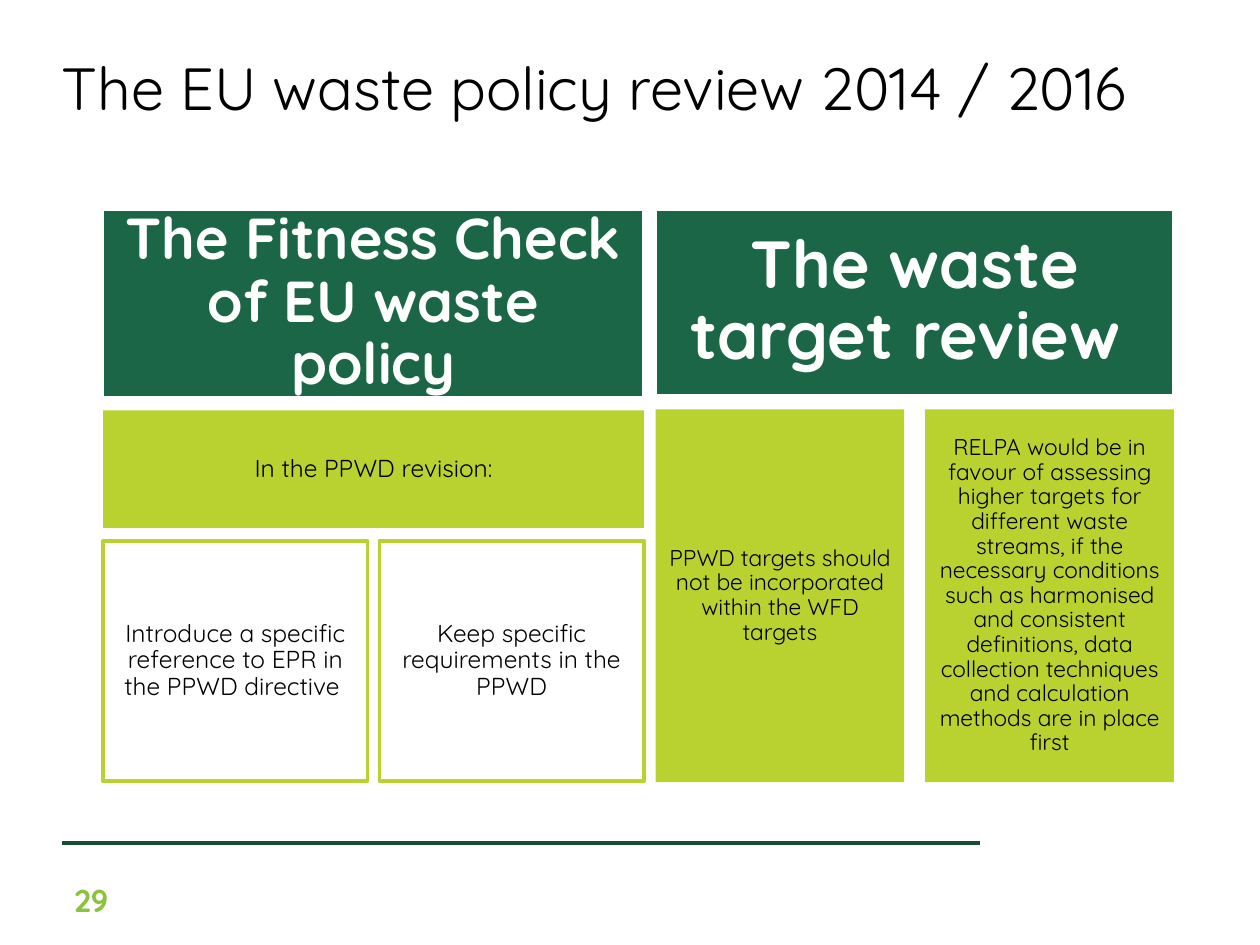
from dataclasses import dataclass

from lxml.etree import SubElement
from pptx import Presentation
from pptx.dml.color import RGBColor
from pptx.enum.shapes import MSO_CONNECTOR, MSO_SHAPE
from pptx.enum.text import MSO_ANCHOR, MSO_AUTO_SIZE, PP_ALIGN
from pptx.oxml.ns import qn
from pptx.util import Pt


@dataclass(frozen=True)
class Theme:
    font: str = "Quicksand"
    black: str = "000000"
    white: str = "FFFFFF"
    forest: str = "1B6647"
    lime: str = "B9D230"
    rule: str = "1A4B33"
    number: str = "8BC33E"
    title_size: int = 34
    fitness_size: int = 33
    target_size: int = 38
    body_size: int = 14
    detail_size: int = 13
    number_size: int = 18


THEME = Theme()


def color(value):
    return RGBColor.from_string(value)


def write_text(frame, text, *, size, ink=THEME.black, bold=False, align=PP_ALIGN.LEFT,
               anchor=MSO_ANCHOR.MIDDLE, inset=0, spacing=1.0):
    frame.word_wrap = True
    frame.auto_size = MSO_AUTO_SIZE.NONE
    frame.vertical_anchor = anchor
    frame.margin_left = frame.margin_right = Pt(inset)
    frame.margin_top = frame.margin_bottom = Pt(inset)
    para = frame.paragraphs[0]
    para.alignment = align
    para.line_spacing = spacing
    span = para.add_run()
    span.text = text
    span.font.name = THEME.font
    span.font.size = Pt(size)
    span.font.bold = bold
    span.font.color.rgb = color(ink)


def add_title(page, text):
    title = page.shapes.title
    title.left, title.top, title.width, title.height = Pt(35.3), Pt(0), Pt(652.3), Pt(99.4)
    write_text(title.text_frame, text, size=THEME.title_size)


def add_box(page, text, place, *, fill=None, outline=None, **text_format):
    box = page.shapes.add_shape(MSO_SHAPE.RECTANGLE, *(Pt(length) for length in place))
    box.shadow.inherit = False
    if fill:
        box.fill.solid()
        box.fill.fore_color.rgb = color(fill)
    else:
        box.fill.background()
    if outline:
        box.line.color.rgb = color(outline)
        box.line.width = Pt(2)
    else:
        box.line.fill.background()
    write_text(box.text_frame, text, align=PP_ALIGN.CENTER, spacing=0.9, **text_format)


def add_header(page, text, place, **text_format):
    add_box(page, text, place, fill=THEME.forest, outline=THEME.white,
            ink=THEME.white, bold=True, **text_format)


def add_fitness_check(page):
    left, width, gap = 59, 309, 6.6
    half = (width - gap) / 2
    add_header(page, "The Fitness Check of EU waste policy", (58.7, 119.5, 309.2, 107.7),
               size=THEME.fitness_size, inset=10)
    add_box(page, "In the PPWD revision:", (left, 234.5, width, 67.1),
            fill=THEME.lime, size=THEME.body_size, inset=4.2)
    requests = ("Introduce a specific reference to EPR in the PPWD directive ",
                "Keep specific requirements in the PPWD")
    for index, text in enumerate(requests):
        add_box(page, text, (left + index * (half + gap), 309, half, 137.4),
                outline=THEME.lime, size=THEME.body_size, inset=4.2)


def add_target_review(page):
    left, width, gap = 374.6, 296.2, 12
    half = (width - gap) / 2
    add_header(page, "The waste target review ", (374.6, 119.5, 296.4, 106.6),
               size=THEME.target_size, inset=11.5)
    positions = ("PPWD targets should not be incorporated within the WFD targets",
                 "RELPA would be in favour of assessing higher targets for different waste "
                 "streams, if the necessary conditions such as harmonised and consistent "
                 "definitions, data collection techniques and calculation methods are in "
                 "place first")
    for index, text in enumerate(positions):
        add_box(page, text, (left + index * (half + gap), 234, half, 213),
                fill=THEME.lime, size=THEME.detail_size, inset=3.6)


def add_footer(page, number):
    rule = page.shapes.add_connector(MSO_CONNECTOR.STRAIGHT, Pt(35.3), Pt(481.7),
                                     Pt(560.2), Pt(481.7))
    rule.line.color.rgb = color(THEME.rule)
    rule.line.width = Pt(2)
    SubElement(rule._element.spPr, qn("a:effectLst"))
    box = page.shapes.add_textbox(Pt(35.3), Pt(499.7), Pt(44), Pt(28.8))
    write_text(box.text_frame, number, size=THEME.number_size, ink=THEME.number,
               bold=True, anchor=MSO_ANCHOR.TOP, inset=3.6)
    box.text_frame.margin_left = Pt(7.2)


def main():
    deck = Presentation()
    deck.slide_width, deck.slide_height = Pt(720), Pt(540)
    page = deck.slides.add_slide(deck.slide_layouts[5])

    # Title
    add_title(page, "The EU waste policy review 2014 / 2016")
    # Left and right columns
    add_fitness_check(page)
    add_target_review(page)
    # Rule and page number
    add_footer(page, "29")

    deck.save("out.pptx")


if __name__ == "__main__":
    main()
